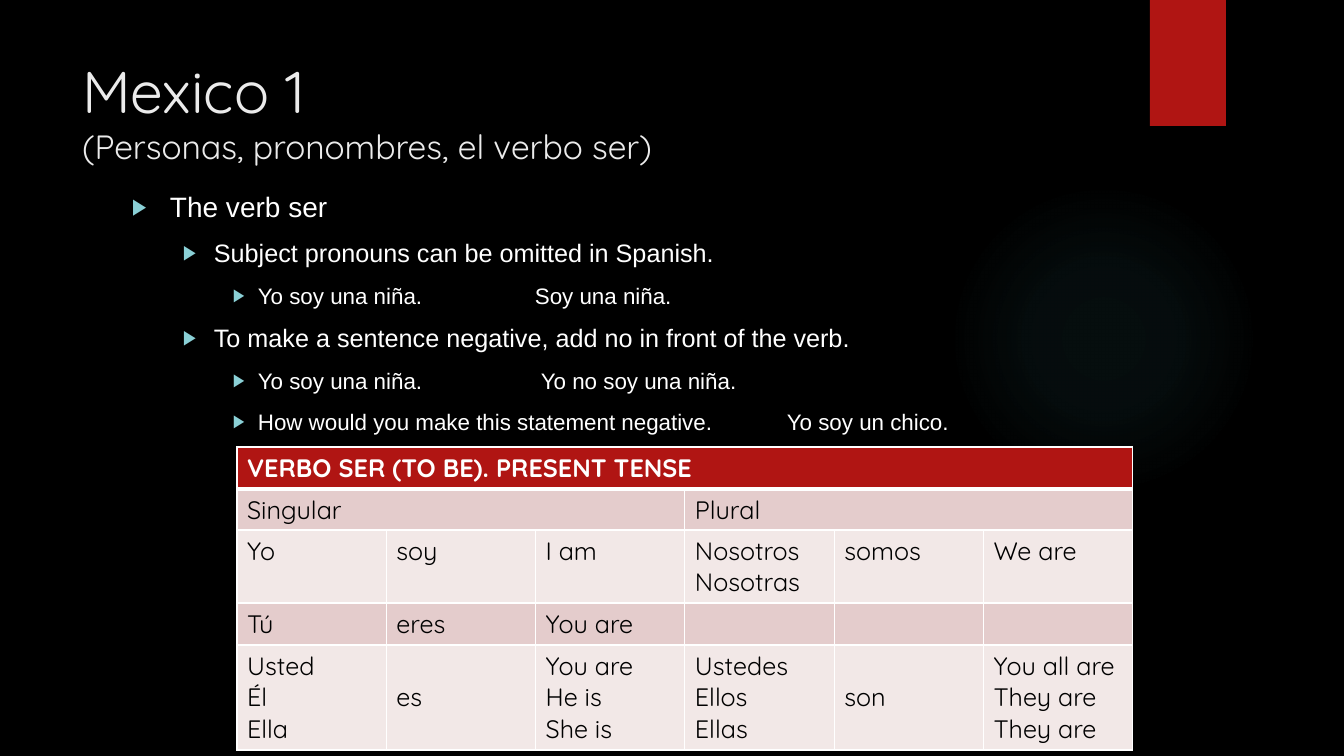
"""Build the slide on the Spanish verb ser."""
import lxml.etree
import pptx
import pptx.dml.color
import pptx.enum.shapes
import pptx.enum.text
import pptx.oxml.ns
import pptx.util

EMU_PER_PX = 914400 / 100.8
RED, WHITE, BLACK, CYAN = "B01513", "FFFFFF", "000000", "50B9C1"
DARK_BAND, LIGHT_BAND = "E4CCCC", "F2E8E7"
LEVELS = [(38, 38, 20), (82, 31, 18), (126, 25, 16)]
NOTES = [
    (0, "The verb ser", None),
    (1, "Subject pronouns can be omitted in Spanish.", None),
    (2, "Yo soy una niña.\tSoy una niña.", 403),
    (1, "To make a sentence negative, add no in front of the verb.", None),
    (2, "Yo soy una niña.\tYo no soy una niña.", 409),
    (2, "How would you make this statement negative.\tYo soy un chico.", 655),
]
VERB_ROWS = [
    ["VERBO SER (TO BE). PRESENT TENSE", "", "", "", "", ""],
    ["Singular", "", "", "Plural", "", ""],
    ["Yo", "soy", "I am", "Nosotros\nNosotras", "somos", "We are"],
    ["Tú", "eres", "You are", "", "", ""],
    ["Usted\nÉl\nElla", "es", "You are\nHe is\nShe is",
     "Ustedes\nEllos\nEllas", "son", "You all are\nThey are\nThey are"],
]
ROW_HEIGHTS = [42, 41, 73, 42, 105]
MERGES = [(0, 0, 5), (1, 0, 2), (1, 3, 5)]


def px(length):
    """Turn pixels into EMU."""
    return pptx.util.Emu(round(length * EMU_PER_PX))


def color(value):
    """Turn a hex string into a colour."""
    return pptx.dml.color.RGBColor.from_string(value)


def add_child(parent, tag, **attributes):
    """Append a drawing element with its attributes."""
    child = lxml.etree.SubElement(parent, pptx.oxml.ns.qn(tag))
    for name, value in attributes.items():
        child.set(name, str(value))
    return child


def set_font(font, name, size, hex_color, bold=False):
    """Set the face, size, colour and weight of a font."""
    font.name, font.size, font.bold = name, pptx.util.Pt(size), bold
    font.color.rgb = color(hex_color)


def add_plain_shape(slide, kind, left, top, width, height):
    """Add a shape without line or shadow."""
    shape = slide.shapes.add_shape(kind, px(left), px(top), px(width), px(height))
    shape.shadow.inherit = False
    shape.line.fill.background()
    return shape


def add_glow(slide):
    """Add the faint round glow."""
    glow = add_plain_shape(slide, pptx.enum.shapes.MSO_SHAPE.OVAL, 949, 184, 310, 310)
    glow.fill.gradient()
    gradient = glow.fill._xPr.find(pptx.oxml.ns.qn("a:gradFill"))
    for child in list(gradient):
        gradient.remove(child)
    stops = add_child(gradient, "a:gsLst")
    for position, alpha in [(0, 7), (36, 6), (69, 0)]:
        stop = add_child(stops, "a:gs", pos=position * 1000)
        tint = add_child(stop, "a:srgbClr", val=CYAN)
        add_child(tint, "a:alpha", val=alpha * 1000)
    circle = add_child(gradient, "a:path", path="circle")
    add_child(circle, "a:fillToRect", l=50000, t=50000, r=50000, b=50000)


def add_ribbon(slide):
    """Add the red ribbon at the top edge."""
    ribbon = add_plain_shape(slide, pptx.enum.shapes.MSO_SHAPE.RECTANGLE, 1150, 0, 76, 126)
    ribbon.fill.solid()
    ribbon.fill.fore_color.rgb = color(RED)


def set_title(slide):
    """Place and fill the title with its smaller second line."""
    title = slide.shapes.title
    title.left, title.top, title.width, title.height = px(72), px(50), px(1037), px(154)
    frame = title.text_frame
    frame.auto_size = pptx.enum.text.MSO_AUTO_SIZE.NONE
    frame.vertical_anchor = pptx.enum.text.MSO_ANCHOR.TOP
    paragraph = frame.paragraphs[0]
    paragraph.alignment = pptx.enum.text.PP_ALIGN.LEFT
    paragraph.line_spacing = 1.0
    heading = paragraph.add_run()
    heading.text = "Mexico 1"
    set_font(heading.font, "Quicksand", 42, "EBEBEB")
    paragraph.add_line_break()
    subtitle = paragraph.add_run()
    subtitle.text = "(Personas, pronombres, el verbo ser)"
    set_font(subtitle.font, "Quicksand", 24, "EBEBEB")


def format_bullet(paragraph, level, tab):
    """Set the indent, bullet and tab stop of a paragraph."""
    margin, hanging, size = LEVELS[level]
    paragraph.level = level
    properties = paragraph._p.get_or_add_pPr()
    properties.set("marL", str(px(margin)))
    properties.set("indent", str(-px(hanging)))
    add_child(add_child(properties, "a:buClr"), "a:srgbClr", val="8AD0D6")
    add_child(properties, "a:buSzPct", val=80000)
    add_child(properties, "a:buFont", typeface="Arial")
    add_child(properties, "a:buChar", char="▶")
    if tab:
        add_child(add_child(properties, "a:tabLst"), "a:tab", pos=px(tab), algn="l")
    set_font(paragraph.font, "Arial", size, WHITE)


def add_notes(slide):
    """Add the bulleted grammar notes."""
    frame = slide.shapes.add_textbox(px(122), px(185), px(1072), px(463)).text_frame
    frame.word_wrap = True
    for index, (level, text, tab) in enumerate(NOTES):
        paragraph = frame.add_paragraph() if index else frame.paragraphs[0]
        paragraph.text = text
        format_bullet(paragraph, level, tab)
        if index:
            paragraph.space_before = pptx.util.Pt(10)


def format_cell(cell, row):
    """Set the borders, fill and font of a cell."""
    properties = cell._tc.get_or_add_tcPr()
    thick_side = {0: "a:lnB", 1: "a:lnT"}.get(row)
    for side in ["a:lnL", "a:lnR", "a:lnT", "a:lnB"]:
        width = pptx.util.Pt(3 if side == thick_side else 1)
        border = add_child(properties, side, w=width)
        add_child(add_child(border, "a:solidFill"), "a:srgbClr", val=WHITE)
    cell.fill.solid()
    band = DARK_BAND if row % 2 else LIGHT_BAND
    cell.fill.fore_color.rgb = color(band if row else RED)
    for paragraph in cell.text_frame.paragraphs:
        set_font(paragraph.font, "Quicksand", 18, BLACK if row else WHITE, row == 0)


def add_verb_table(slide):
    """Add the conjugation table."""
    table = slide.shapes.add_table(
        len(VERB_ROWS), len(VERB_ROWS[0]), px(237), px(447), px(896), px(sum(ROW_HEIGHTS))
    ).table
    table.first_row = table.horz_banding = False
    for row, texts in enumerate(VERB_ROWS):
        table.rows[row].height = px(ROW_HEIGHTS[row])
        for column, text in enumerate(texts):
            cell = table.cell(row, column)
            cell.text = text
            format_cell(cell, row)
    for row, first, last in MERGES:
        table.cell(row, first).merge(table.cell(row, last))
    for column in (1, 4):
        table.cell(4, column).vertical_anchor = pptx.enum.text.MSO_ANCHOR.MIDDLE


def main():
    """Build and save the presentation."""
    presentation = pptx.Presentation()
    presentation.slide_width, presentation.slide_height = px(1344), px(756)
    slide = presentation.slides.add_slide(presentation.slide_layouts[5])
    slide.background.fill.solid()
    slide.background.fill.fore_color.rgb = color(BLACK)
    add_glow(slide)
    add_ribbon(slide)
    set_title(slide)
    add_notes(slide)
    add_verb_table(slide)
    presentation.save("out.pptx")


if __name__ == "__main__":
    main()
